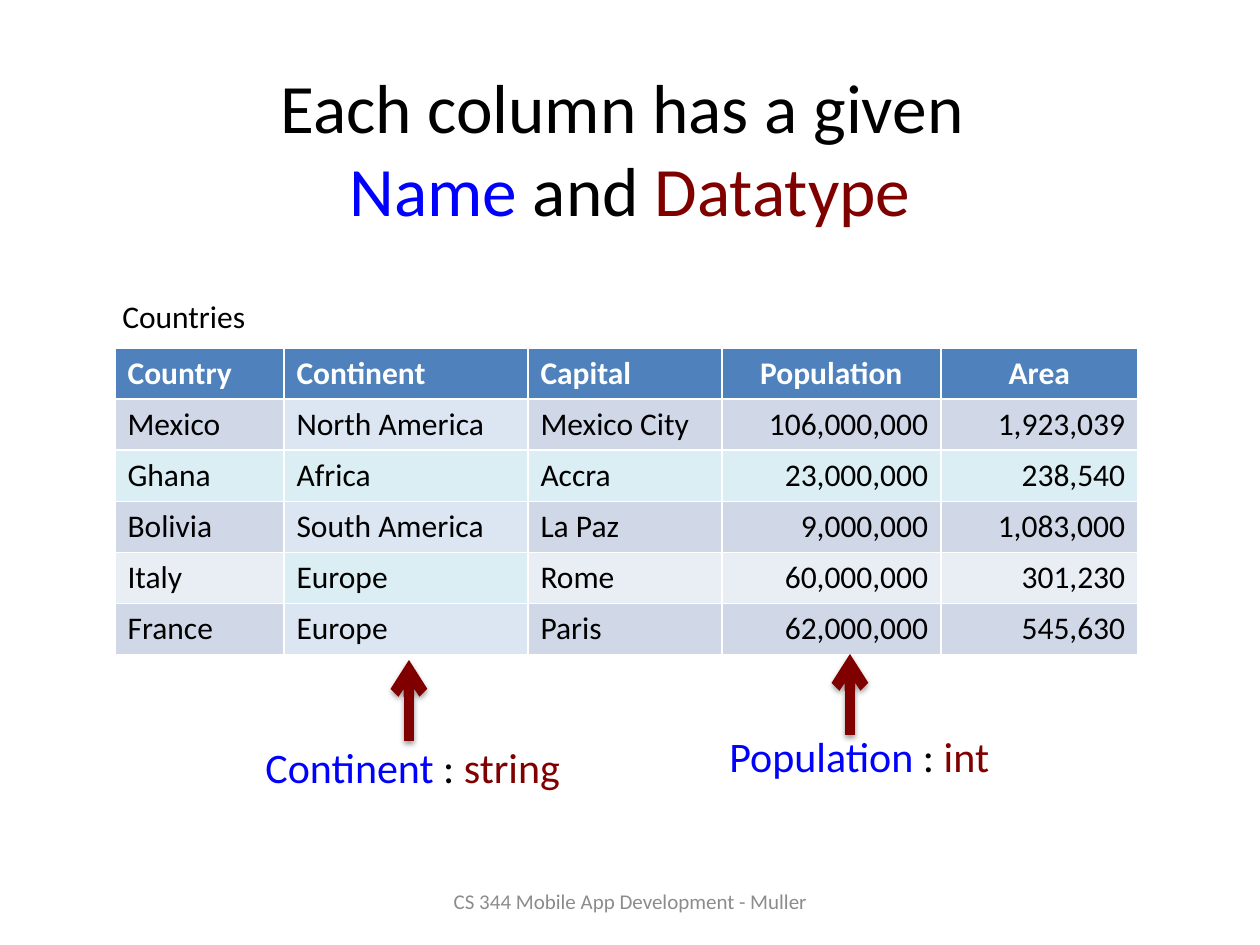
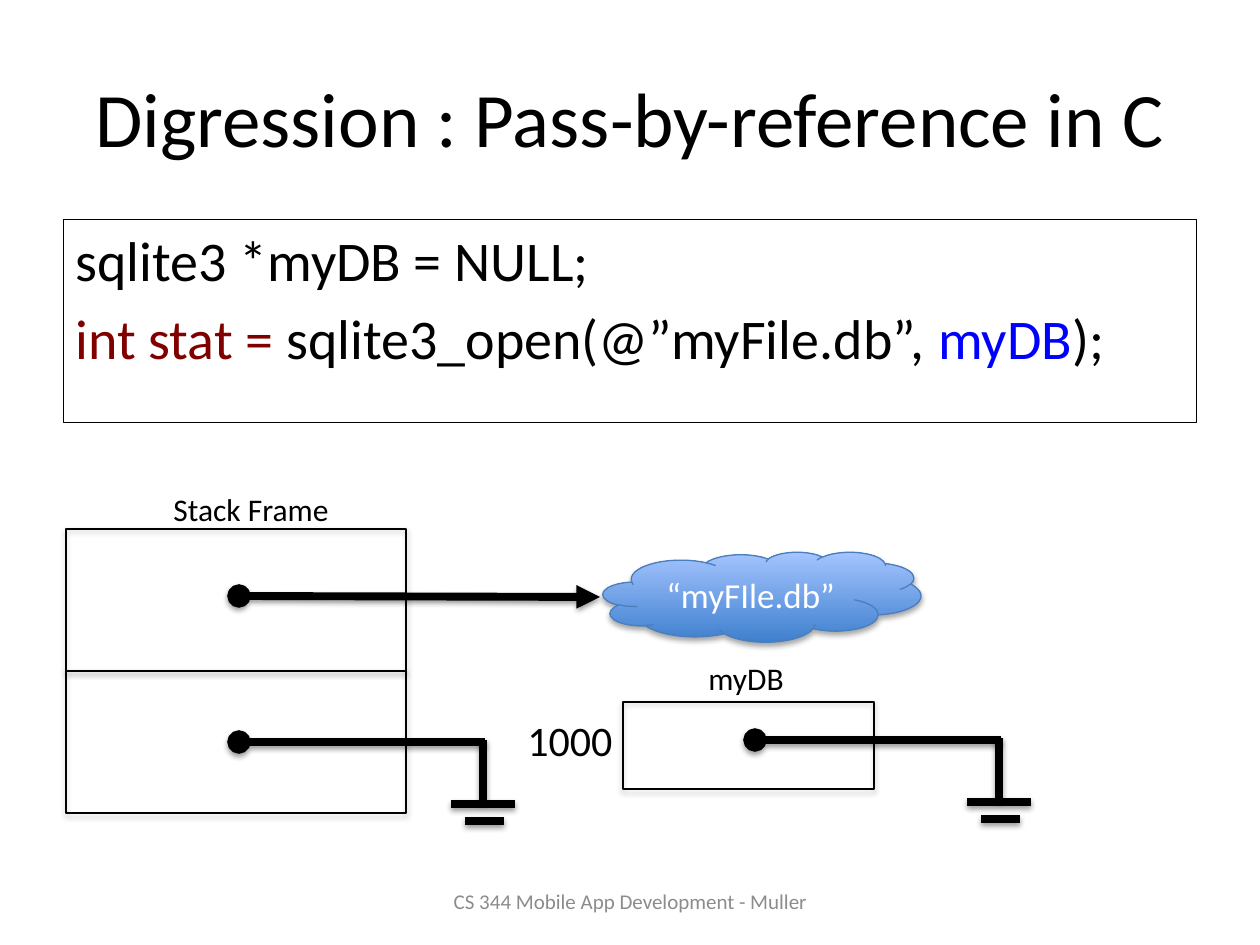
from lxml.etree import SubElement
from pptx import Presentation
from pptx.dml.color import RGBColor
from pptx.enum.shapes import MSO_CONNECTOR as Connector, MSO_SHAPE as Preset
from pptx.enum.text import MSO_ANCHOR as Anchor, MSO_AUTO_SIZE as AutoSize, PP_ALIGN as Align
from pptx.oxml.ns import qn
from pptx.util import Emu, Pt

PX = 914400 / 126
FONT = "Calibri"
BLACK, WHITE, BLUE, MAROON, GREY = "000000", "FFFFFF", "0000FF", "800000", "8C8C8C"
HEADER, BAND, PALE_BAND, PALE_BLUE, AQUA = "4F81BD", "D0D8E8", "E9EDF4", "DCE6F2", "DBEEF4"
FOOTER = "CS 344 Mobile App Development - Muller"

COUNTRIES = [
    ["Country", "Continent", "Capital", "Population", "Area"],
    ["Mexico", "North America", "Mexico City", "106,000,000", "1,923,039"],
    ["Ghana", "Africa", "Accra", "23,000,000", "238,540"],
    ["Bolivia", "South America", "La Paz", "9,000,000", "1,083,000"],
    ["Italy", "Europe", "Rome", "60,000,000", "301,230"],
    ["France", "Europe", "Paris", "62,000,000", "545,630"],
]
COLUMN_WIDTHS = [169, 244, 194, 219, 197]
ROW_HEIGHT = 51
CONTINENT = 1
FIRST_NUMBER = 3
GHANA = 2


def px(*lengths):
    return [Emu(round(length * PX)) for length in lengths]


def color(value):
    return RGBColor.from_string(value)


def write(frame, *lines, size=18, fill=BLACK, bold=False, align=Align.LEFT,
          anchor=Anchor.TOP, wrap=True, grow=False, space_before=0):
    frame.word_wrap = wrap
    frame.auto_size = AutoSize.SHAPE_TO_FIT_TEXT if grow else AutoSize.NONE
    frame.vertical_anchor = anchor
    for index, line in enumerate(lines):
        paragraph = frame.add_paragraph() if index else frame.paragraphs[0]
        paragraph.alignment = align
        paragraph.space_before = Pt(space_before)
        for text, run_fill in [(line, fill)] if isinstance(line, str) else line:
            if text == "\n":
                paragraph.add_line_break()
                SubElement(paragraph._p[-1], qn("a:rPr"), sz=str(round(size * 100)))
                continue
            run = paragraph.add_run()
            run.text = text
            font = run.font
            font.name, font.size, font.bold = FONT, Pt(size), bold
            font.color.rgb = color(run_fill)


def add_shadow(shape, distance, opacity):
    effects = SubElement(shape._element.spPr, qn("a:effectLst"))
    shadow = SubElement(effects, qn("a:outerShdw"), blurRad="40000", dist=str(distance),
                        dir="5400000", rotWithShape="0")
    black = SubElement(shadow, qn("a:srgbClr"), val=BLACK)
    SubElement(black, qn("a:alpha"), val=str(opacity * 1000))


def add_label(slide, line, box, **style):
    label = slide.shapes.add_textbox(*px(*box))
    write(label.text_frame, line, **style)


def add_tag(slide, line, box, size=18):
    add_label(slide, line, box, size=size, wrap=False, grow=True)


def add_box(slide, box, preset=Preset.RECTANGLE, line=BLACK, width=0.75, shadow=True):
    shape = slide.shapes.add_shape(preset, *px(*box))
    shape.fill.background()
    shape.line.color.rgb = color(line)
    shape.line.width = Pt(width)
    if shadow:
        add_shadow(shape, 23000, 35)
    else:
        shape.shadow.inherit = False
    return shape


def add_line(slide, start, end, fill=BLACK, width=4.5, head=None, tail=None):
    line = slide.shapes.add_connector(Connector.STRAIGHT, *px(*start, *end))
    line.line.color.rgb = color(fill)
    line.line.width = Pt(width)
    for tag, kind in (("a:headEnd", head), ("a:tailEnd", tail)):
        if kind:
            SubElement(line.line._ln, qn(tag), type=kind)
    add_shadow(line, 20000, 38)


def add_grounded_wire(slide, x, y):
    add_line(slide, (x, y), (x + 246, y), head="oval")
    add_line(slide, (x + 244, y - 2), (x + 244, y + 60))
    add_line(slide, (x + 276, y + 62), (x + 212, y + 62))
    add_line(slide, (x + 265, y + 79), (x + 226, y + 79))


def add_titled_slide(presentation, title_line, top, size):
    slide = presentation.slides.add_slide(presentation.slide_layouts[5])
    title = slide.shapes.title
    title.left, title.top, title.width, title.height = px(63, top, 1134, 158)
    write(title.text_frame, title_line, size=size, align=Align.CENTER, anchor=Anchor.MIDDLE)
    add_label(slide, FOOTER, (431, 876, 399, 50), size=12, fill=GREY,
              align=Align.CENTER, anchor=Anchor.MIDDLE)
    return slide


def cell_fill(row, column):
    if row == 0:
        return HEADER
    if row == GHANA:
        return AQUA
    if column == CONTINENT:
        return PALE_BLUE if row % 2 else AQUA
    return BAND if row % 2 else PALE_BAND


def add_country_table(slide, left, top):
    height = ROW_HEIGHT * len(COUNTRIES)
    frame = slide.shapes.add_table(len(COUNTRIES), len(COLUMN_WIDTHS),
                                   *px(left, top, sum(COLUMN_WIDTHS), height))
    table = frame.table
    for column, width in zip(table.columns, px(*COLUMN_WIDTHS)):
        column.width = width
    for row, values in enumerate(COUNTRIES):
        table.rows[row].height = px(ROW_HEIGHT)[0]
        is_header = row == 0
        for column, value in enumerate(values):
            cell = table.cell(row, column)
            cell.fill.solid()
            cell.fill.fore_color.rgb = color(cell_fill(row, column))
            align = Align.LEFT
            if column >= FIRST_NUMBER:
                align = Align.CENTER if is_header else Align.RIGHT
            write(cell.text_frame, value, bold=is_header, align=align,
                  fill=WHITE if is_header else BLACK)


def add_columns_slide(presentation):
    title = [("Each column has a given ", BLACK), ("\n", BLACK),
             ("Name", BLUE), (" and ", BLACK), ("Datatype", MAROON)]
    slide = add_titled_slide(presentation, title, top=68, size=39.6)
    add_country_table(slide, 115, 348)
    add_tag(slide, "Countries", (110, 291, 150, 50))
    add_tag(slide, [("Continent", BLUE), (" : ", BLACK), ("string", MAROON)],
            (253, 735, 324, 63), size=24)
    add_tag(slide, [("Population ", BLUE), (": ", BLACK), ("int", MAROON)],
            (717, 724, 289, 63), size=24)
    for x, bottom in ((409, 741), (850, 735)):
        add_line(slide, (x, bottom), (x, bottom - 81), fill=MAROON, width=6, tail="arrow")


def add_reference_slide(presentation):
    slide = add_titled_slide(presentation, "Digression : Pass-by-reference in C", top=38, size=44)
    code = add_box(slide, (63, 219, 1134, 204), width=0.5, shadow=False)
    write(code.text_frame, "sqlite3 *myDB = NULL;",
          [("int stat = ", MAROON), ("sqlite3_open(@”myFile.db”, ", BLACK),
           ("myDB", BLUE), (");", BLACK)], size=32, space_before=6.4)

    add_box(slide, (623, 702, 251, 87))
    for index in range(2):
        add_box(slide, (66, 529 + 142 * index, 340, 142))
    add_tag(slide, "Stack Frame", (161, 484, 183, 50))
    add_tag(slide, "myDB", (696, 653, 102, 50))
    add_tag(slide, "1000", (515, 708, 111, 63), size=24)

    add_grounded_wire(slide, 755, 740)
    add_line(slide, (239, 596), (600, 597), head="oval", tail="triangle")
    cloud = add_box(slide, (603, 552, 318, 90), preset=Preset.CLOUD, line="4B7EBC")
    cloud.fill.gradient()
    cloud.fill.gradient_angle = 90
    for stop, shade in zip(cloud.fill.gradient_stops, ("3F80CE", "A4C4FF")):
        stop.color.rgb = color(shade)
    write(cloud.text_frame, "“myFIle.db”", size=20, fill=WHITE,
          align=Align.CENTER, anchor=Anchor.MIDDLE)
    add_grounded_wire(slide, 239, 742)


def main():
    presentation = Presentation()
    presentation.slide_width, presentation.slide_height = px(1260, 945)
    add_columns_slide(presentation)
    add_reference_slide(presentation)
    presentation.save("out.pptx")


if __name__ == "__main__":
    main()
